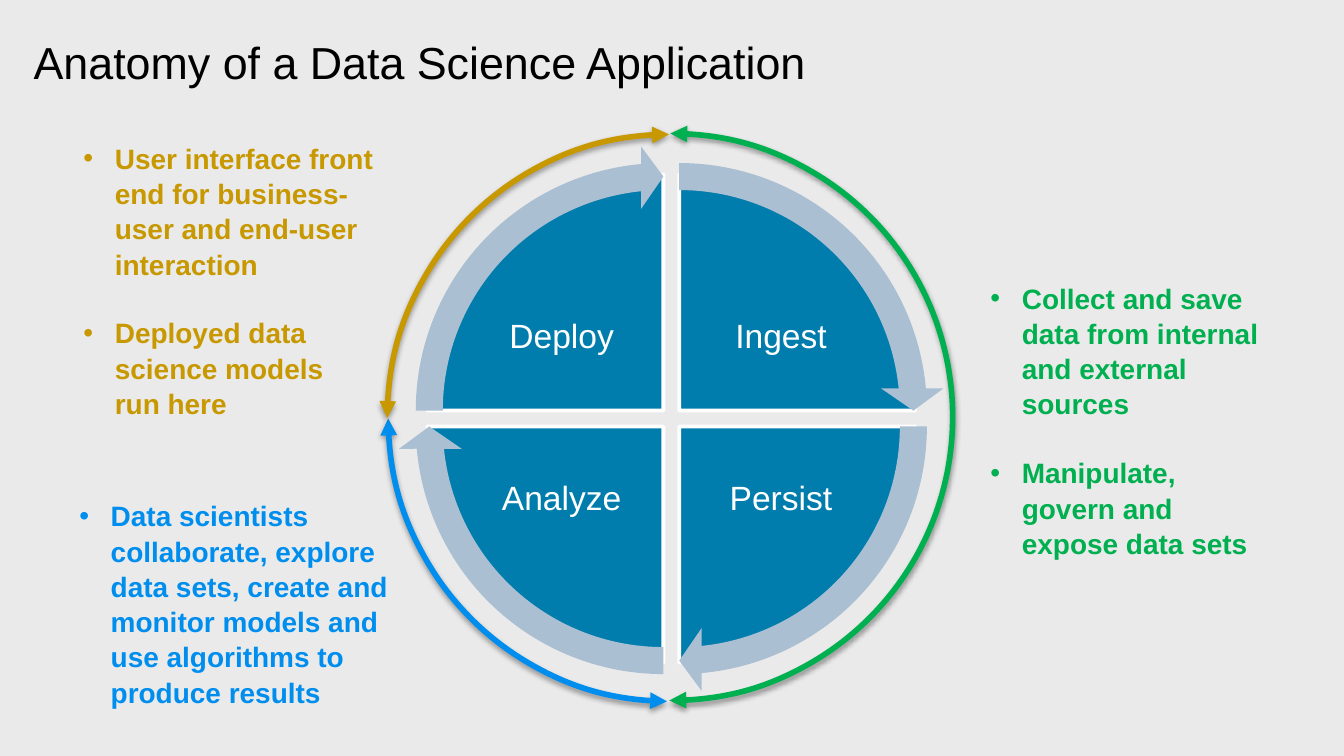
import copy
from dataclasses import dataclass

import pptx
import pptx.dml.color
import pptx.enum.shapes
import pptx.enum.text
import pptx.oxml
import pptx.oxml.ns
import pptx.util

Pt = pptx.util.Pt
SHAPE = pptx.enum.shapes.MSO_SHAPE
ALIGN = pptx.enum.text.PP_ALIGN
ANCHOR = pptx.enum.text.MSO_ANCHOR
COMPARISON_LAYOUT = 4
ADJUST_PER_DEGREE = 0.6
DRAWING_NS = pptx.oxml.ns.nsdecls("a")


@dataclass(frozen=True)
class Theme:
    font: str = "Arial"
    background: str = "EAEAEA"
    title: str = "000000"
    wedge: str = "007DAD"
    wedge_edge: str = "FFFFFF"
    flow: str = "ABBFD3"
    data: str = "00B050"
    science: str = "008EEE"
    interface: str = "C89800"
    title_size: float = 24
    stage_size: float = 18
    list_size: float = 15


THEME = Theme()


def rgb(color):
    return pptx.dml.color.RGBColor.from_string(color)


def write(frame, paragraphs, *, size, color, bold=False, align=ALIGN.LEFT,
          anchor=ANCHOR.TOP, spacing=1.0, gap=0, inset=(0, 0), bullet_indent=0):
    frame.word_wrap = True
    frame.auto_size = pptx.enum.text.MSO_AUTO_SIZE.NONE
    frame.vertical_anchor = anchor
    frame.margin_left = frame.margin_right = Pt(inset[0])
    frame.margin_top = frame.margin_bottom = Pt(inset[1])
    for index, text in enumerate(paragraphs):
        paragraph = frame.add_paragraph() if index else frame.paragraphs[0]
        paragraph.text = text
        paragraph.alignment = align
        paragraph.line_spacing = spacing
        paragraph.space_before = Pt(gap if index else 0)
        paragraph.space_after = Pt(0)
        for run in paragraph.runs:
            run.font.name = THEME.font
            run.font.size = Pt(size)
            run.font.bold = bold
            run.font.color.rgb = rgb(color)
        for line_break in paragraph._p.findall(pptx.oxml.ns.qn("a:br")):
            line_break.insert(0, copy.deepcopy(paragraph.runs[0]._r.rPr))
        if bullet_indent:
            properties = paragraph._p.get_or_add_pPr()
            properties.set("marL", str(Pt(bullet_indent)))
            properties.set("indent", str(-Pt(bullet_indent)))
            properties.append(pptx.oxml.parse_xml(
                f'<a:buFont {DRAWING_NS} typeface="{THEME.font}"/>'))
            properties.append(pptx.oxml.parse_xml(
                f'<a:buChar {DRAWING_NS} char="•"/>'))


def place(part, box):
    part.left, part.top, part.width, part.height = map(Pt, box)


def add_curve(shapes, preset, box, adjustments):
    curve = shapes.add_shape(preset, *map(Pt, box))
    curve.shadow.inherit = False
    for index, value in enumerate(adjustments):
        curve.adjustments[index] = value
    return curve


def fill_title(placeholder, box, text):
    place(placeholder, box)
    write(placeholder.text_frame, [text], size=THEME.title_size,
          color=THEME.title, spacing=0.9)


def fill_list(placeholder, box, color, items):
    place(placeholder, box)
    write(placeholder.text_frame, items, size=THEME.list_size, color=color,
          bold=True, spacing=1.05, gap=18, inset=(7.2, 3.6), bullet_indent=16.8)


def draw_wheel(slide, box, stages):
    left, top, side = box
    gap = 8.5
    pie_side = side - gap
    label_width, label_height = 66.2, 49
    label_x, label_y = 38.8, 62.6
    flow_margin = 15.8
    flow_side = pie_side + 2 * flow_margin
    head_sweep = 3.28
    quarter = 90 * ADJUST_PER_DEGREE
    full_turn = 4 * quarter
    shapes = slide.shapes.add_group_shape().shapes

    wedges = []
    for index, stage in enumerate(stages):
        on_right, on_bottom = index in (0, 1), index in (1, 2)
        start = (index + 3) % 4 * quarter
        pie_left, pie_top = left + gap * on_right, top + gap * on_bottom
        wedges.append((pie_left, pie_top, start))
        wedge = add_curve(shapes, SHAPE.PIE, (pie_left, pie_top, pie_side, pie_side),
                          (start, (start + quarter) % full_turn))
        wedge.fill.solid()
        wedge.fill.fore_color.rgb = rgb(THEME.wedge)
        wedge.line.color.rgb = rgb(THEME.wedge_edge)
        wedge.line.width = Pt(2)

        x = side - label_x - label_width if on_right else label_x
        y = side - label_y - label_height if on_bottom else label_y
        label = shapes.add_textbox(*map(Pt, (left + x, top + y, label_width, label_height)))
        write(label.text_frame, [stage], size=THEME.stage_size, color=THEME.wedge_edge,
              align=ALIGN.CENTER, anchor=ANCHOR.MIDDLE, spacing=0.9)

    for pie_left, pie_top, start in wedges:
        flow = add_curve(shapes, SHAPE.CIRCULAR_ARROW,
                         (pie_left - flow_margin, pie_top - flow_margin, flow_side, flow_side),
                         (5.1 / 100, head_sweep, start + quarter - head_sweep
                          - full_turn * (start + quarter > full_turn), start, 5.9 / 100))
        flow.fill.solid()
        flow.fill.fore_color.rgb = rgb(THEME.flow)
        flow.line.fill.background()


def draw_ring(slide, box, sweeps):
    left, top, width, height = box
    for color, start, end, shift_x, shift_y in sweeps:
        arc = add_curve(slide.shapes, SHAPE.ARC,
                        (left + shift_x, top + shift_y, width, height),
                        (start * ADJUST_PER_DEGREE, end * ADJUST_PER_DEGREE))
        arc.fill.background()
        arc.line.color.rgb = rgb(color)
        arc.line.width = Pt(3)
        for end_tag in ("headEnd", "tailEnd"):
            arc.line._get_or_add_ln().append(pptx.oxml.parse_xml(
                f'<a:{end_tag} {DRAWING_NS} type="triangle"/>'))
        effects = arc._element.spPr.find(pptx.oxml.ns.qn("a:effectLst"))
        effects.append(pptx.oxml.parse_xml(
            f'<a:outerShdw {DRAWING_NS} blurRad="{Pt(3.1)}" dist="{Pt(1.6)}" '
            'dir="5400000" rotWithShape="0"><a:srgbClr val="000000">'
            '<a:alpha val="38000"/></a:srgbClr></a:outerShdw>'))


def main():
    deck = pptx.Presentation()
    deck.slide_width, deck.slide_height = Pt(720), Pt(405)
    slide = deck.slides.add_slide(deck.slide_layouts[COMPARISON_LAYOUT])
    slide.background.fill.solid()
    slide.background.fill.fore_color.rgb = rgb(THEME.background)

    title, data_list, science_list, interface_list, *spares = slide.placeholders
    for spare in spares:
        spare._element.getparent().remove(spare._element)

    fill_title(title, (18, 21.6, 447, 30.2), "Anatomy of a Data Science Application")
    draw_wheel(slide, (229, 93.6, 261.3), ("Ingest", "Persist", "Analyze", "Deploy"))
    draw_ring(slide, (208, 71.5, 302.4, 303.8), (
        (THEME.data, 270, 90.2, 0, 0),
        (THEME.science, 90.7, 179.86, 0, 0.5),
        (THEME.interface, 180, 269.88, -0.5, 0.5),
    ))
    fill_list(data_list, (523.4, 146.2, 162, 152.6), THEME.data, (
        "Collect and save data from internal and external sources",
        "Manipulate, govern and expose data sets",
    ))
    fill_list(science_list, (35.3, 262.8, 190, 116.6), THEME.science, (
        "Data scientists collaborate, explore data sets, create and monitor models "
        "and use algorithms to\nproduce results",
    ))
    fill_list(interface_list, (37.5, 71.3, 182.2, 152.6), THEME.interface, (
        "User interface front end for business-user and end-user interaction",
        "Deployed data science models\nrun here",
    ))
    deck.save("out.pptx")


if __name__ == "__main__":
    main()
